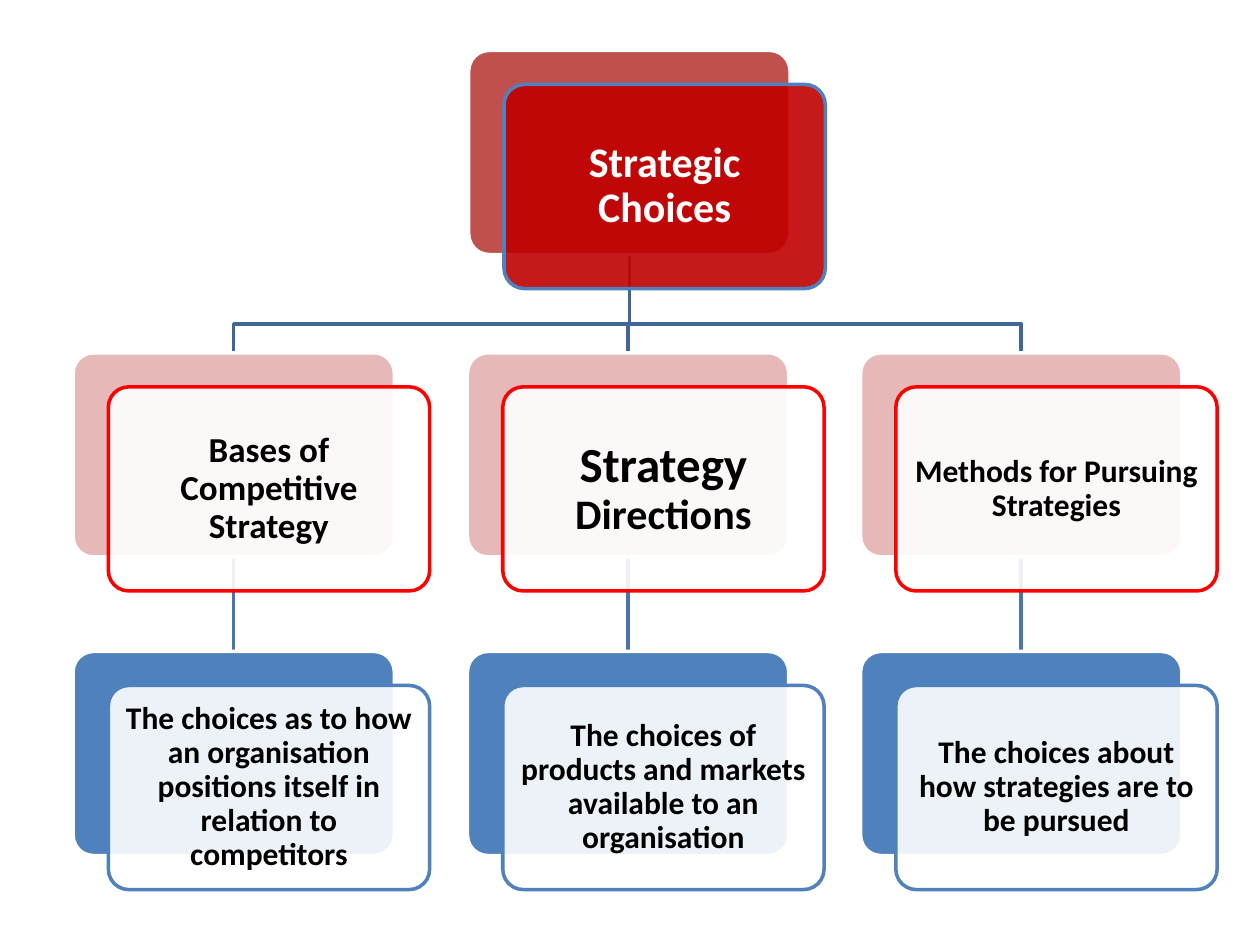
from dataclasses import dataclass

from lxml.etree import SubElement
from pptx import Presentation
from pptx.dml.color import RGBColor
from pptx.enum.shapes import MSO_CONNECTOR as CONN, MSO_SHAPE as SHAPE
from pptx.enum.text import MSO_ANCHOR as ANCHOR, PP_ALIGN as ALIGN
from pptx.oxml.ns import qn
from pptx.util import Inches, Pt

WHITE = RGBColor(0xFF, 0xFF, 0xFF)
BLACK = RGBColor(0x00, 0x00, 0x00)
BRICK = RGBColor(0xC0, 0x50, 0x4D)
DARK_RED = RGBColor(0xC0, 0x00, 0x00)
RED = RGBColor(0xFF, 0x00, 0x00)
PINK = RGBColor(0xE6, 0xB9, 0xB8)
BLUE = RGBColor(0x4F, 0x81, 0xBD)
BRANCH_BLUE = RGBColor(0x3F, 0x67, 0x97)
STEM_BLUE = RGBColor(0x48, 0x75, 0xAC)

FONT = "Calibri"
CARD_W, CARD_H = 2.55, 1.62
OFFSET_X, OFFSET_Y = 0.28, 0.27
ROOT_X, ROOT_Y = 3.72, 0.4
COLUMNS = (0.58, 3.71, 6.83)
OPTION_Y, DETAIL_Y = 2.8, 5.17
BEND_Y = 2.57
LINE_WIDTH = Pt(2)


@dataclass(frozen=True)
class Style:
    back: RGBColor
    front: RGBColor
    border: RGBColor
    text: RGBColor


@dataclass(frozen=True)
class Run:
    text: str
    size: int
    bold: bool = True


@dataclass(frozen=True)
class Card:
    runs: tuple[Run, ...]
    inset: float = 0.07


ROOT_STYLE = Style(BRICK, DARK_RED, BLUE, WHITE)
OPTION_STYLE = Style(PINK, WHITE, RED, BLACK)
DETAIL_STYLE = Style(BLUE, WHITE, BLUE, BLACK)

ROOT = Card((Run("Strategic Choices", 24),), 0.1)
OPTIONS = (
    Card((Run("Bases of Competitive Strategy", 20),), 0.08),
    Card((Run("Strategy", 28), Run(" ", 16, False), Run("Directions", 24)), 0.12),
    Card((Run("Methods for Pursuing Strategies", 18),)),
)
DETAILS = (
    Card((Run("The choices as to how an organisation positions itself in "
              "relation to competitors", 18),)),
    Card((Run("The choices of products and markets available to an organisation", 18),)),
    Card((Run("The choices about how strategies are to be pursued", 18),)),
)


def add_stem(shapes, x: float, top: float, bottom: float, color: RGBColor) -> None:
    line = shapes.add_connector(
        CONN.STRAIGHT, Inches(x), Inches(top), Inches(x), Inches(bottom))
    line.line.color.rgb = color
    line.line.width = LINE_WIDTH
    SubElement(line._element.spPr, qn("a:effectLst"))


def add_branch(shapes, start_x: float, end_x: float) -> None:
    builder = shapes.build_freeform(Inches(start_x), Inches(ROOT_Y + CARD_H))
    points = ((start_x, BEND_Y), (end_x, BEND_Y), (end_x, OPTION_Y))
    builder.add_line_segments([(Inches(x), Inches(y)) for x, y in points], close=False)
    sp = builder.convert_to_shape()
    sp.fill.background()
    sp.line.color.rgb = BRANCH_BLUE
    sp.line.width = LINE_WIDTH
    sp.shadow.inherit = False


def add_panel(shapes, x: float, y: float, fill: RGBColor, border: RGBColor):
    sp = shapes.add_shape(
        SHAPE.ROUNDED_RECTANGLE, Inches(x), Inches(y), Inches(CARD_W), Inches(CARD_H))
    sp.adjustments[0] = 0.1
    sp.fill.solid()
    sp.fill.fore_color.rgb = fill
    sp.line.color.rgb = border
    sp.line.width = LINE_WIDTH
    sp.shadow.inherit = False
    return sp


def add_card(shapes, x: float, y: float, card: Card, style: Style) -> None:
    add_panel(shapes, x, y, style.back, WHITE)
    sp = add_panel(shapes, x + OFFSET_X, y + OFFSET_Y, style.front, style.border)
    color = sp._element.spPr.find(qn("a:solidFill"))[0]
    SubElement(color, qn("a:alpha"), val="90000")
    tf = sp.text_frame
    tf.word_wrap = True
    tf.vertical_anchor = ANCHOR.MIDDLE
    tf.margin_left = tf.margin_right = Inches(card.inset)
    tf.margin_top = tf.margin_bottom = Inches(card.inset)
    p = tf.paragraphs[0]
    p.alignment = ALIGN.CENTER
    p.line_spacing = 0.9
    for run in card.runs:
        r = p.add_run()
        r.text = run.text
        r.font.name = FONT
        r.font.size = Pt(run.size)
        r.font.bold = run.bold
        r.font.color.rgb = style.text


def main() -> None:
    prs = Presentation()
    prs.slide_width, prs.slide_height = Inches(10), Inches(7.5)
    shapes = prs.slides.add_slide(prs.slide_layouts[6]).shapes

    root_center = ROOT_X + CARD_W / 2
    centers = [x + CARD_W / 2 for x in COLUMNS]
    for center in centers:
        add_stem(shapes, center, OPTION_Y + CARD_H, DETAIL_Y, STEM_BLUE)
    for center in centers:
        add_branch(shapes, root_center, center)

    add_card(shapes, ROOT_X, ROOT_Y, ROOT, ROOT_STYLE)
    for x, option, detail in zip(COLUMNS, OPTIONS, DETAILS):
        add_card(shapes, x, OPTION_Y, option, OPTION_STYLE)
        add_card(shapes, x, DETAIL_Y, detail, DETAIL_STYLE)

    prs.save("out.pptx")


if __name__ == "__main__":
    main()
